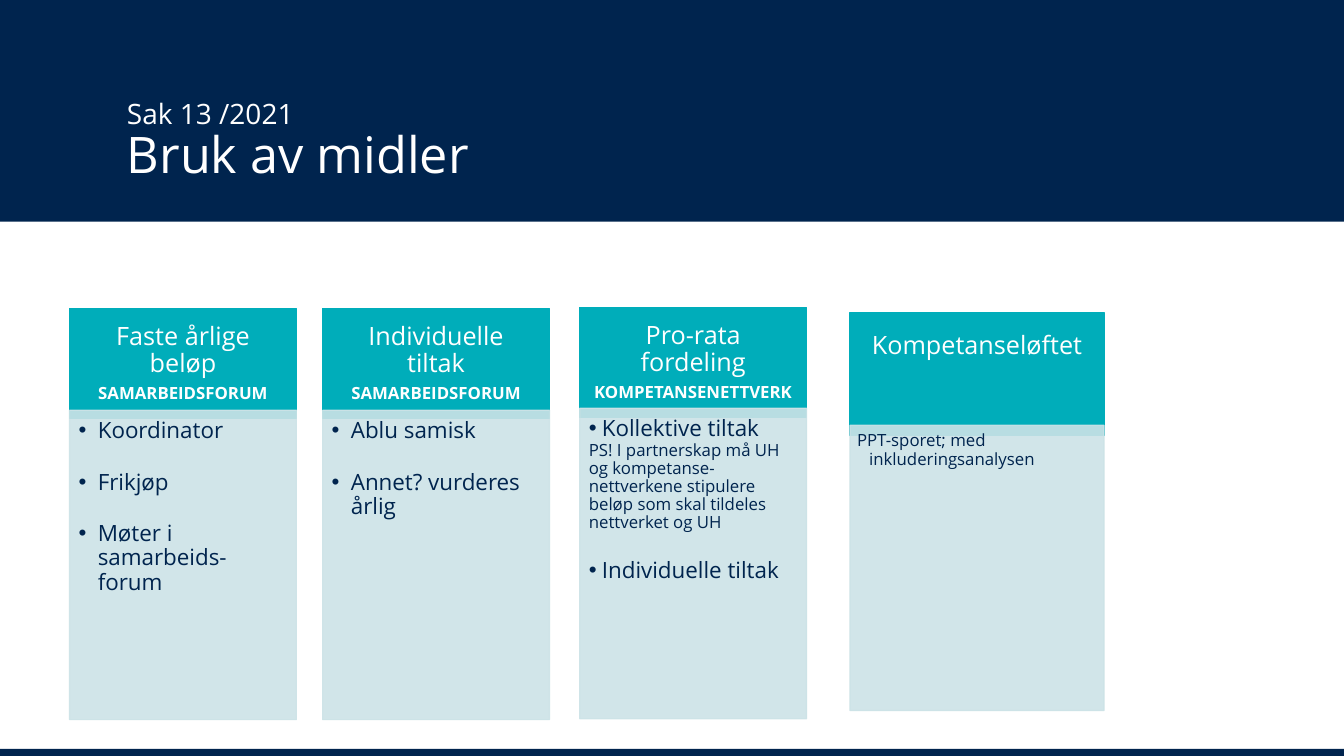
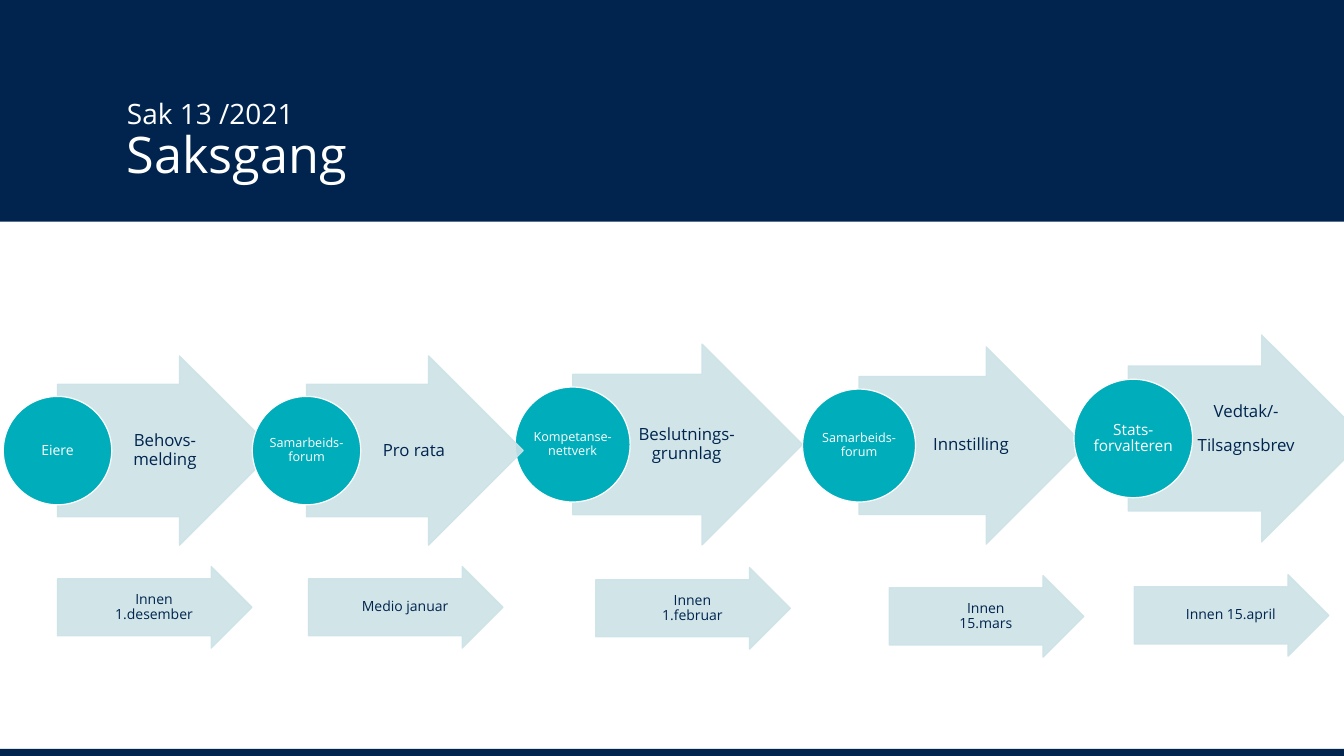
from lxml.etree import SubElement
from pptx import Presentation
from pptx.dml.color import RGBColor
from pptx.enum.shapes import MSO_SHAPE
from pptx.enum.text import MSO_ANCHOR, PP_ALIGN
from pptx.oxml.ns import qn
from pptx.util import Inches, Pt


class Theme:
    navy = RGBColor.from_string("00244E")
    teal = RGBColor.from_string("00ADBA")
    pale = RGBColor.from_string("CCE3E7")
    white = RGBColor.from_string("FFFFFF")
    font = "Open Sans"
    kicker, title = 20, 36
    head, body, small, date = 18, 16, 12, 10
    line = 0.85
    spacing = 0.9
    pale_alpha = 90
    gap, head_gap, step_gap = 19.6, 4.5, 11


KICKER = "Sak 13 /2021"
HEAD_INSETS = (0.14, 0.08, 0.14, 0.08)
BODY_INSETS = (0.09, 0.09, 0.12, 0.14)
STEP_INSETS = (0.03, 0.01, 0.02, 0.01)
CIRCLE_INSETS = (0.01,) * 4


def item(text, before=0, hang=0.19, bullet=True, size=Theme.body):
    return dict(text=text, before=before, hang=hang, bullet=bullet, size=size)


# left, top, width, header height, body top, body height
COLUMNS = [
    dict(box=(3.2, 3.06, 2.25, 1.09, 4.07, 3.07),
         head="Individuelle tiltak", forum="SAMARBEIDSFORUM",
         items=[item("Ablu samisk"),
                item("Annet? vurderes årlig", Theme.gap)]),
    dict(box=(0.69, 3.06, 2.25, 1.09, 4.07, 3.07),
         head="Faste årlige beløp", forum="SAMARBEIDSFORUM",
         items=[item("Koordinator"),
                item("Frikjøp", Theme.gap),
                item("Møter i samarbeids-forum", Theme.gap)]),
    dict(box=(5.75, 3.05, 2.25, 1.09, 4.05, 3.08),
         head="Pro-rata fordeling", forum="KOMPETANSENETTVERK",
         items=[item("Kollektive tiltak", hang=0.13),
                item("PS! I partnerskap må UH og kompetanse-nettverkene stipulere "
                     "beløp som skal tildeles nettverket og UH",
                     hang=0, bullet=False, size=Theme.small),
                item("Individuelle tiltak", Theme.gap, hang=0.13)]),
    dict(box=(8.43, 3.1, 2.52, 1.22, 4.22, 2.83),
         head="Kompetanseløftet", head_insets=(0.14, 0.08, 0.14, 0.62),
         body_insets=(0.07, 0.07, 0.09, 0.1),
         items=[item("PPT-sporet; med inkluderingsanalysen",
                     hang=0.12, bullet=False, size=Theme.small)]),
]

# Arrow left, middle and width; circle text and size; arrow lines
STEPS = [
    dict(arrow=(0.57, 4.47, 2.15), who="Eiere", size=10, what=["Behovs-melding"]),
    dict(arrow=(5.68, 4.41, 2.28), who="Kompetanse-nettverk", size=9,
         what=["Beslutnings-grunnlag"]),
    dict(arrow=(8.52, 4.42, 2.24), who="Samarbeids-forum", size=9, what=["Innstilling"]),
    dict(arrow=(11.19, 4.35, 2.35), who="Stats-forvalteren", size=11,
         what=["Vedtak/-", "Tilsagnsbrev"], circle_shift=0.05,
         insets=(0.04, 0.01, 0.02, 0.2)),
    dict(arrow=(3.04, 4.47, 2.15), who="Samarbeids-forum", size=9, what=["Pro rata"]),
]
STEP_RATIO = 0.874

# Arrow left and top
DATES = [
    (0.57, 5.62, "Innen 1.desember"),
    (3.06, 5.62, "Medio januar"),
    (5.91, 5.63, "Innen 1.februar"),
    (11.25, 5.7, "Innen 15.april"),
    (8.82, 5.71, "Innen 15.mars"),
]
DATE_SIZE = (1.93, 0.81)


def set_font(font, size, color, bold=False):
    for name, value in dict(name=Theme.font, size=Pt(size), bold=bold).items():
        setattr(font, name, value)
    font.color.rgb = color


def set_frame(tf, insets, anchor):
    sides = ("margin_left", "margin_top", "margin_right", "margin_bottom")
    for side, inset in zip(sides, insets):
        setattr(tf, side, Inches(inset))
    tf.word_wrap = True
    tf.vertical_anchor = anchor


def set_bullet(p, hang, bullet):
    pPr = p._p.get_or_add_pPr()
    pPr.set("marL", str(Inches(hang)))
    pPr.set("indent", str(-Inches(hang)))
    if bullet:
        SubElement(pPr, qn("a:buFont")).set("typeface", "Arial")
        SubElement(pPr, qn("a:buChar")).set("char", "•")
    else:
        SubElement(pPr, qn("a:buNone"))


def write(tf, paragraphs, color, insets, anchor=MSO_ANCHOR.MIDDLE, align=PP_ALIGN.CENTER):
    set_frame(tf, insets, anchor)
    for i, spec in enumerate(paragraphs):
        p = tf.add_paragraph() if i else tf.paragraphs[0]
        if "hang" in spec:
            set_bullet(p, spec["hang"], spec["bullet"])
        p.alignment = align
        p.line_spacing = Theme.spacing
        if spec.get("before"):
            p.space_before = Pt(spec["before"])
        r = p.add_run()
        r.text = spec["text"]
        set_font(r.font, spec["size"], color, spec.get("bold", False))


def add_box(s, kind, at, fill, line=None, alpha=None):
    sp = s.shapes.add_shape(kind, *map(Inches, at))
    sp.shadow.inherit = False
    sp.fill.solid()
    sp.fill.fore_color.rgb = fill
    if line is None:
        sp.line.fill.background()
    else:
        sp.line.color.rgb = line
        sp.line.width = Pt(Theme.line)
    if alpha:
        for clr in sp._element.spPr.findall(".//" + qn("a:srgbClr")):
            SubElement(clr, qn("a:alpha")).set("val", str(alpha * 1000))
    return sp


def add_pale(s, kind, at):
    return add_box(s, kind, at, Theme.pale, Theme.pale, Theme.pale_alpha)


def add_arrow(s, at, paragraphs, insets=STEP_INSETS):
    """Draw a pale arrow with its text in the middle half of the width."""
    left, top, width, height = at
    sp = add_pale(s, MSO_SHAPE.RIGHT_ARROW, at)
    sp.adjustments[0], sp.adjustments[1] = 0.7, 0.5
    area = (left + width / 4, top + 0.15 * height, 0.4875 * width, 0.7 * height)
    tb = s.shapes.add_textbox(*map(Inches, area))
    write(tb.text_frame, paragraphs, Theme.navy, insets)


def add_slide(prs, title):
    s = prs.slides.add_slide(prs.slide_layouts[6])
    for top, height in ((7.43, 0.07), (0, 2.2)):
        add_box(s, MSO_SHAPE.RECTANGLE, (0, top, 13.33, height), Theme.navy)
    tf = s.shapes.add_textbox(*map(Inches, (1.16, 0.7, 11.02, 1.18))).text_frame
    set_frame(tf, (0.1, 0.05, 0.1, 0.05), MSO_ANCHOR.BOTTOM)
    p = tf.paragraphs[0]
    p.line_spacing = Theme.spacing
    for text, size in ((KICKER, Theme.kicker), (title, Theme.title)):
        if p.runs:
            p.add_line_break()
        r = p.add_run()
        r.text = text
        set_font(r.font, size, Theme.white)
    return s


def add_column(s, column):
    left, top, width, head_height, body_top, body_height = column["box"]
    head = add_box(s, MSO_SHAPE.RECTANGLE, (left, top, width, head_height),
                   Theme.teal, Theme.teal)
    lines = [dict(text=column["head"], size=Theme.head)]
    if "forum" in column:
        lines.append(dict(text=column["forum"], size=Theme.small, bold=True,
                          before=Theme.head_gap))
    write(head.text_frame, lines, Theme.white, column.get("head_insets", HEAD_INSETS))
    body = add_pale(s, MSO_SHAPE.RECTANGLE, (left, body_top, width, body_height))
    write(body.text_frame, column["items"], Theme.navy,
          column.get("body_insets", BODY_INSETS), MSO_ANCHOR.TOP, PP_ALIGN.LEFT)


def add_step(s, step):
    """Draw an arrow and a circle half its width, centred on its left edge."""
    left, middle, width = step["arrow"]
    height = STEP_RATIO * width
    lines = [dict(text=text, size=Theme.small, before=Theme.step_gap if i else 0)
             for i, text in enumerate(step["what"])]
    add_arrow(s, (left, middle - height / 2, width, height), lines,
              step.get("insets", STEP_INSETS))
    d = width / 2
    circle_left = left - d / 2 + step.get("circle_shift", 0)
    circle = add_box(s, MSO_SHAPE.OVAL, (circle_left, middle - d / 2, d, d),
                     Theme.teal, Theme.white)
    write(circle.text_frame, [dict(text=step["who"], size=step["size"])],
          Theme.white, CIRCLE_INSETS)


def main():
    prs = Presentation()
    prs.slide_width, prs.slide_height = Inches(13.33), Inches(7.5)

    s = add_slide(prs, "Bruk av midler")
    for column in COLUMNS:
        add_column(s, column)

    s = add_slide(prs, "Saksgang")
    for step in STEPS:
        add_step(s, step)
    for left, top, text in DATES:
        add_arrow(s, (left, top, *DATE_SIZE), [dict(text=text, size=Theme.date)])

    prs.save("out.pptx")


if __name__ == "__main__":
    main()
